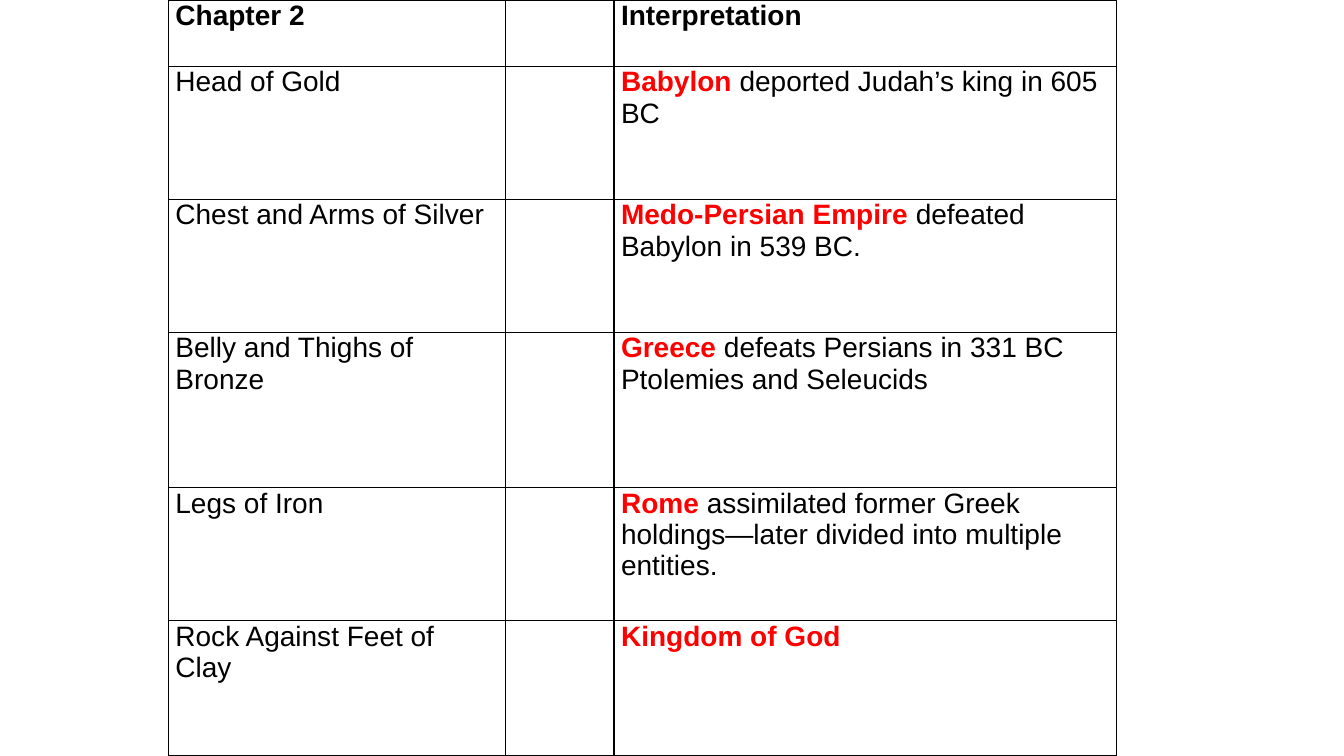
from lxml import etree
from pptx import Presentation
from pptx.dml.color import RGBColor
from pptx.enum.text import MSO_ANCHOR, PP_ALIGN
from pptx.oxml.ns import qn
from pptx.util import Inches, Pt

TOP = MSO_ANCHOR.TOP
LEFT = PP_ALIGN.LEFT
BLACK = RGBColor(0x00, 0x00, 0x00)
RED = RGBColor(0xFF, 0x00, 0x00)
WHITE = RGBColor(0xFF, 0xFF, 0xFF)

COLUMN_WIDTHS = [3.34, 1.08, 4.98]
ROW_HEIGHTS = [0.66, 1.32, 1.32, 1.54, 1.32, 1.34]

HEADINGS = ("Chapter 2", "Interpretation")
KINGDOMS = [
    ("Head of Gold", "Babylon", " deported Judah’s king in 605 BC"),
    ("Chest and Arms of Silver", "Medo-Persian Empire ", "defeated Babylon in 539 BC."),
    ("Belly and Thighs of Bronze", "Greece",
     " defeats Persians in 331 BC Ptolemies and Seleucids"),
    ("Legs of Iron", "Rome",
     " assimilated former Greek holdings—later divided into multiple entities."),
    ("Rock Against Feet of Clay", "Kingdom of God", ""),
]


class SlideBuilder:
    font = "Arial"
    size = Pt(20)
    border = Pt(1)
    side_inset = Inches(0.07)

    def __init__(self, slide):
        self.slide = slide

    def add_grid(self, left, top, widths, heights):
        grid = self.slide.shapes.add_table(
            len(heights), len(widths), Inches(left), Inches(top),
            Inches(sum(widths)), Inches(sum(heights))).table
        grid.horz_banding = False
        grid.first_row = False
        for column, width in zip(grid.columns, widths):
            column.width = Inches(width)
        for row, height in zip(grid.rows, heights):
            row.height = Inches(height)
        for cell in grid.iter_cells():
            self.format_cell(cell)
        return grid

    def format_cell(self, cell):
        cell.margin_left = cell.margin_right = self.side_inset
        cell.margin_top = cell.margin_bottom = 0
        cell.vertical_anchor = TOP
        cell.fill.solid()
        cell.fill.fore_color.rgb = WHITE
        properties = cell._tc.get_or_add_tcPr()
        for position, side in enumerate(("a:lnL", "a:lnR", "a:lnT", "a:lnB")):
            line = etree.Element(qn(side), w=str(self.border))
            fill = etree.SubElement(line, qn("a:solidFill"))
            etree.SubElement(fill, qn("a:srgbClr"), val=str(BLACK))
            properties.insert(position, line)

    def fill_text(self, cell, *pieces):
        paragraph = cell.text_frame.paragraphs[0]
        paragraph.alignment = LEFT
        for text, color, bold in pieces:
            run = paragraph.add_run()
            run.text = text
            run.font.name = self.font
            run.font.size = self.size
            run.font.bold = bold
            run.font.color.rgb = color


def main():
    presentation = Presentation()
    presentation.slide_width = Inches(13.33)
    presentation.slide_height = Inches(7.5)
    builder = SlideBuilder(
        presentation.slides.add_slide(presentation.slide_layouts[6]))

    statue = builder.add_grid(1.67, 0, COLUMN_WIDTHS, ROW_HEIGHTS)
    for column, heading in zip((0, 2), HEADINGS):
        builder.fill_text(statue.cell(0, column), (heading, BLACK, True))
    for row, (part, kingdom, event) in enumerate(KINGDOMS, start=1):
        builder.fill_text(statue.cell(row, 0), (part, BLACK, False))
        meaning = [(kingdom, RED, True)]
        if event:
            meaning.append((event, BLACK, False))
        builder.fill_text(statue.cell(row, 2), *meaning)

    presentation.save("out.pptx")


if __name__ == "__main__":
    main()
